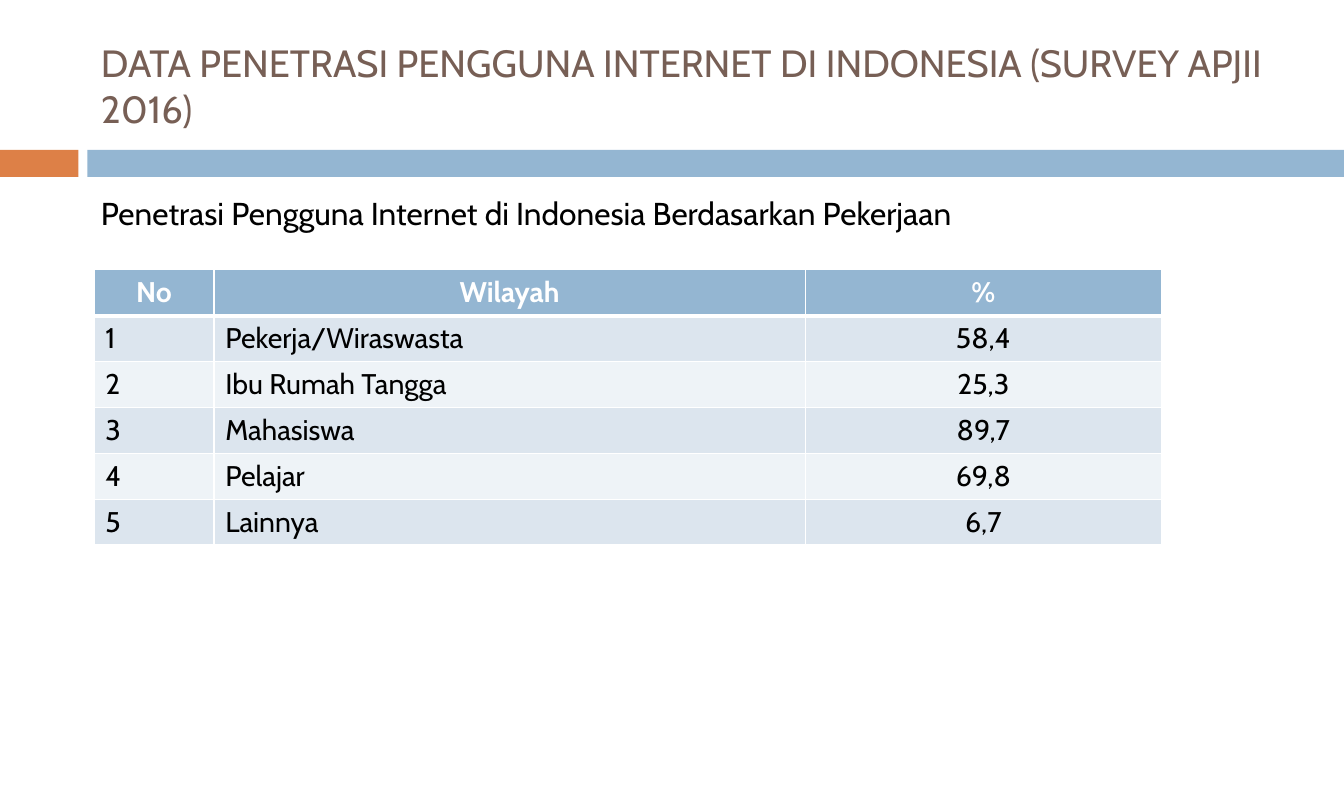
from lxml.etree import SubElement
from pptx import Presentation
from pptx.dml.color import RGBColor
from pptx.enum.shapes import MSO_SHAPE
from pptx.enum.text import MSO_ANCHOR, MSO_AUTO_SIZE, PP_ALIGN
from pptx.oxml.ns import qn
from pptx.util import Pt

PX = 9000
FONT = "Cabin"
COLORS = {
    "title": "775F55", "accent": "DD8047", "blue": "94B6D2",
    "odd": "DCE5EE", "even": "EEF3F7", "black": "000000", "white": "FFFFFF",
}
ROWS = [
    ("No", "Wilayah", "%"),
    ("1", "Pekerja/Wiraswasta", "58,4"),
    ("2", "Ibu Rumah Tangga", "25,3"),
    ("3", "Mahasiswa", "89,7"),
    ("4", "Pelajar", "69,8"),
    ("5", "Lainnya", "6,7"),
]
WIDTHS = [107, 528, 318]
ROW_H = 41


def write(frame, text, size, color, bold=False, align=PP_ALIGN.LEFT):
    frame.text = text
    para = frame.paragraphs[0]
    para.alignment = align
    font = para.runs[0].font
    font.name, font.size, font.bold = FONT, Pt(size), bold
    font.color.rgb = RGBColor.from_string(COLORS[color])


def add_borders(cell, top, bottom):
    """Draw white cell edges, with top and bottom widths in points."""
    props = cell._tc.get_or_add_tcPr()
    for i, (side, width) in enumerate([("L", 1), ("R", 1), ("T", top), ("B", bottom)]):
        line = SubElement(props, qn(f"a:ln{side}"), w=str(Pt(width)))
        fill = SubElement(line, qn("a:solidFill"))
        SubElement(fill, qn("a:srgbClr"), val=COLORS["white"])
        props.insert(i, line)


deck = Presentation()
deck.slide_width, deck.slide_height = 1200 * PX, 720 * PX
slide = deck.slides.add_slide(deck.slide_layouts[5])

# Bands under the title
for left, width, color in [(0, 70, "accent"), (78, 1122, "blue")]:
    band = slide.shapes.add_shape(
        MSO_SHAPE.RECTANGLE, left * PX, 134 * PX, width * PX, 24 * PX)
    band.shadow.inherit = False
    band.fill.solid()
    band.fill.fore_color.rgb = RGBColor.from_string(COLORS[color])
    band.line.fill.background()

# Title and subtitle
title = slide.shapes.title
title.left, title.top, title.width, title.height = 80 * PX, 24 * PX, 1070 * PX, 104 * PX
frame = title.text_frame
frame.auto_size = MSO_AUTO_SIZE.NONE
frame.vertical_anchor = MSO_ANCHOR.MIDDLE
write(frame, "DATA PENETRASI PENGGUNA INTERNET DI INDONESIA (SURVEY APJII 2016)", 24, "title")

box = slide.shapes.add_textbox(80 * PX, 168 * PX, 1070 * PX, 472 * PX)
box.text_frame.word_wrap = True
write(box.text_frame, "Penetrasi Pengguna Internet di Indonesia Berdasarkan Pekerjaan", 20, "black")

# Table
table = slide.shapes.add_table(
    len(ROWS), len(WIDTHS), 84 * PX, 241 * PX,
    sum(WIDTHS) * PX, len(ROWS) * ROW_H * PX).table
for column, width in zip(table.columns, WIDTHS):
    column.width = width * PX
for r, texts in enumerate(ROWS):
    table.rows[r].height = ROW_H * PX
    head = r == 0
    shade = "blue" if head else "odd" if r % 2 else "even"
    for c, text in enumerate(texts):
        cell = table.cell(r, c)
        cell.fill.solid()
        cell.fill.fore_color.rgb = RGBColor.from_string(COLORS[shade])
        align = PP_ALIGN.CENTER if head or c == 2 else PP_ALIGN.LEFT
        write(cell.text_frame, text, 18, "white" if head else "black", head, align)
        add_borders(cell, 3 if r == 1 else 1, 3 if head else 1)

deck.save("out.pptx")
